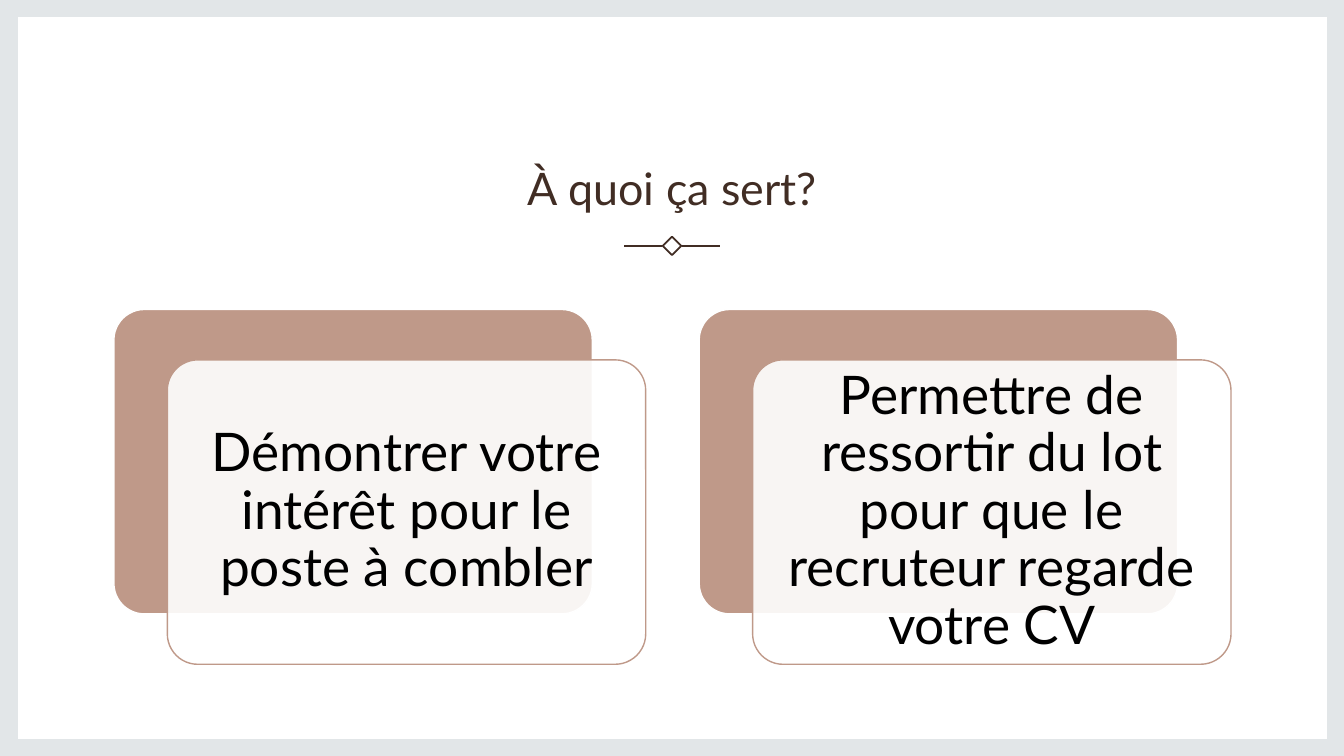
from lxml.etree import SubElement
from pptx import Presentation
from pptx.dml.color import RGBColor
from pptx.enum.shapes import MSO_CONNECTOR, MSO_SHAPE
from pptx.enum.text import MSO_ANCHOR, PP_ALIGN
from pptx.oxml.ns import qn
from pptx.util import Inches, Pt

FONT = "Lato"
BROWN, ROSE, GREY, WHITE, BLACK = "412D24", "BF9989", "E2E6E8", "FFFFFF", "000000"
CARDS = [
    "Démontrer votre intérêt pour le poste à combler",
    "Permettre de ressortir du lot pour que le recruteur regarde votre CV",
]


def rgb(value):
    """Turn a hex string into a colour."""
    return RGBColor.from_string(value)


def add_box(s, kind, x, y, w, h, fill=None, line=None, width=1):
    """Add a flat preset shape with an optional fill and outline."""
    sp = s.shapes.add_shape(kind, Inches(x), Inches(y), Inches(w), Inches(h))
    sp.shadow.inherit = False
    if fill:
        sp.fill.solid()
        sp.fill.fore_color.rgb = rgb(fill)
    else:
        sp.fill.background()
    if line:
        sp.line.color.rgb = rgb(line)
        sp.line.width = Pt(width)
    else:
        sp.line.fill.background()
    return sp


def write(tf, text, size, color, spacing, anchor):
    """Fill a text frame with one centred, wrapped paragraph."""
    tf.word_wrap = True
    tf.vertical_anchor = anchor
    tf.text = text
    p = tf.paragraphs[0]
    p.alignment = PP_ALIGN.CENTER
    p.line_spacing = spacing
    font = p.runs[0].font
    font.name, font.size, font.color.rgb = FONT, Pt(size), rgb(color)


def add_frame(s, x, y, w, h):
    """Draw the grey border around the white page."""
    add_box(s, MSO_SHAPE.RECTANGLE, x, y, w, h, GREY)
    add_box(s, MSO_SHAPE.RECTANGLE, x + 0.18, y + 0.17, w - 0.35, h - 0.34, WHITE)


def add_title(s, x, y, w, h):
    """Place the title in its box."""
    title = s.shapes.title
    title.left, title.top = Inches(x), Inches(y)
    title.width, title.height = Inches(w), Inches(h)
    write(title.text_frame, "À quoi ça sert?", 32, BROWN, 1.1, MSO_ANCHOR.BOTTOM)


def add_ornament(s, x, y, w, h):
    """Draw a small diamond between two rules, centred in its box."""
    cx, cy, side, rule = x + w / 2, y + h / 2, 0.13, 0.38
    diamond = add_box(s, MSO_SHAPE.RECTANGLE, cx - side / 2, cy - side / 2,
                      side, side, line=BROWN, width=1.25)
    diamond.rotation = 45
    for start in (x, x + w - rule):
        c = s.shapes.add_connector(MSO_CONNECTOR.STRAIGHT, Inches(start), Inches(cy),
                                   Inches(start + rule), Inches(cy))
        c.line.color.rgb = rgb(BROWN)
        c.line.width = Pt(1.25)
        SubElement(c._element.spPr, qn("a:effectLst"))


def add_card(s, x, y, w, h, text):
    """Draw a coloured card with a translucent text card offset over it."""
    dx, dy = 0.53, 0.5
    size = w - dx, h - dy
    back = add_box(s, MSO_SHAPE.ROUNDED_RECTANGLE, x, y, *size, ROSE, WHITE)
    front = add_box(s, MSO_SHAPE.ROUNDED_RECTANGLE, x + dx, y + dy, *size, WHITE, ROSE)
    for sp in (back, front):
        sp.adjustments[0] = 0.1
    color = front.fill._xPr.find(qn("a:solidFill"))[0]
    SubElement(color, qn("a:alpha"), val="90000")
    tf = front.text_frame
    tf.margin_left = tf.margin_right = tf.margin_top = tf.margin_bottom = Inches(0.16)
    write(tf, text, 38, BLACK, 0.9, MSO_ANCHOR.MIDDLE)


def add_cards(s, x, y, w, h):
    """Spread the cards evenly over the box."""
    gap = 0.53
    card_w = (w - gap * (len(CARDS) - 1)) / len(CARDS)
    for i, text in enumerate(CARDS):
        add_card(s, x + i * (card_w + gap), y, card_w, h, text)


def main():
    """Build and save the slide."""
    prs = Presentation()
    prs.slide_width, prs.slide_height = Inches(13.33), Inches(7.5)
    s = prs.slides.add_slide(prs.slide_layouts[5])
    s.background.fill.solid()
    s.background.fill.fore_color.rgb = rgb(WHITE)
    add_frame(s, 0, 0, 13.33, 7.5)
    add_title(s, 1.13, 1.05, 11.08, 1.13)
    s.shapes._spTree.append(s.shapes.title._element)
    add_ornament(s, 6.19, 2.34, 0.95, 0.2)
    add_cards(s, 1.13, 3.07, 11.08, 3.52)
    prs.save("out.pptx")


if __name__ == "__main__":
    main()
